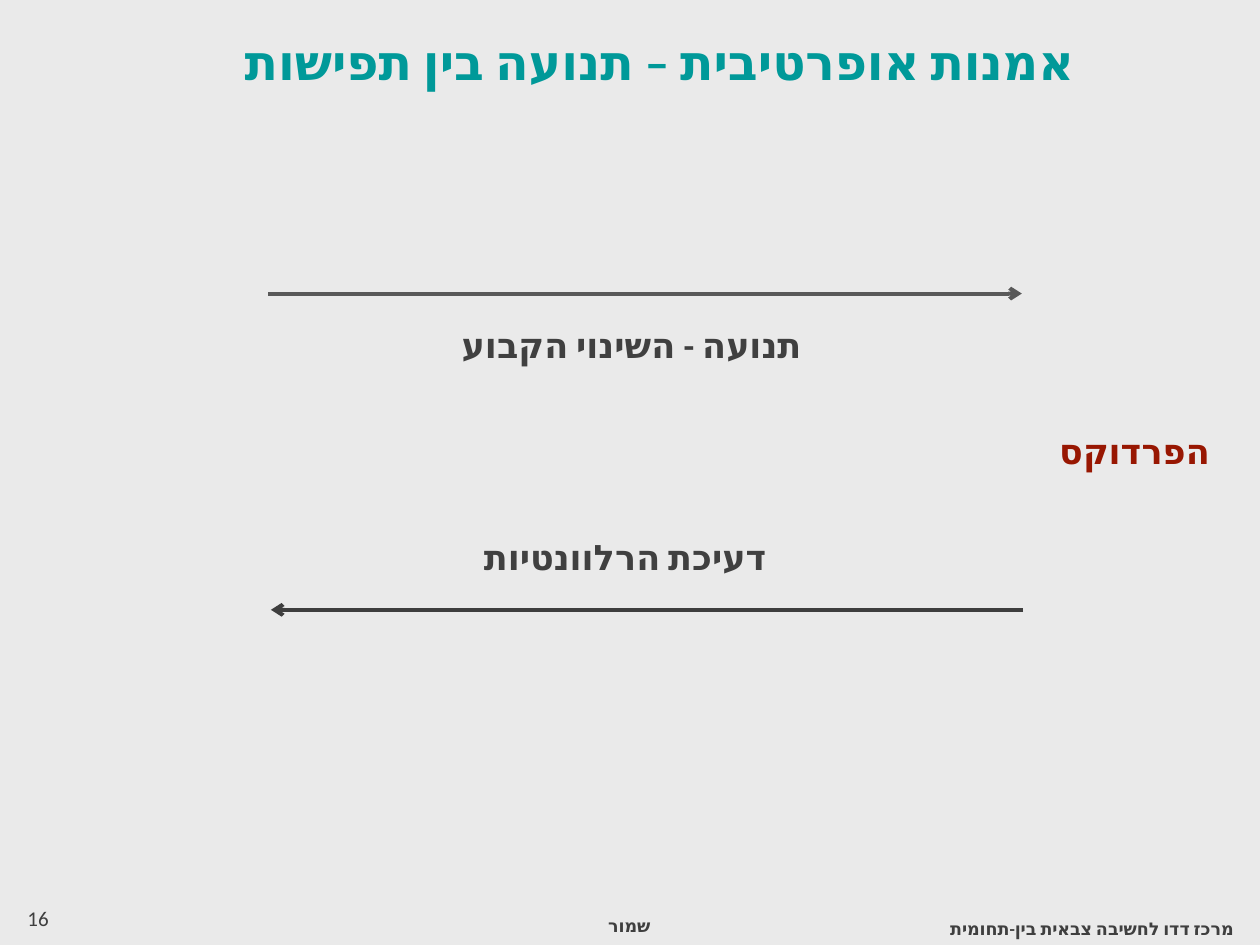
"""Build the slide on operational art as movement between conceptions."""
from dataclasses import dataclass

from lxml import etree
from pptx import Presentation
from pptx import util as u
from pptx.dml.color import RGBColor
from pptx.enum import lang, shapes, text
from pptx.oxml.ns import qn

FONT = "Calibri"
BACKGROUND = RGBColor(0xEA, 0xEA, 0xEA)
TEAL = RGBColor(0x00, 0x99, 0x99)
RED = RGBColor(0x98, 0x17, 0x02)
LABEL = RGBColor(0x40, 0x40, 0x40)
FOOTER = RGBColor(0x3F, 0x3F, 0x3F)
UPPER_ARROW = RGBColor(0x59, 0x59, 0x59)
LOWER_ARROW = RGBColor(0x3E, 0x3E, 0x3E)
LEFT, CENTER, RIGHT = text.PP_ALIGN.LEFT, text.PP_ALIGN.CENTER, text.PP_ALIGN.RIGHT


@dataclass(frozen=True)
class Box:
    left: float
    top: float
    width: float
    height: float


@dataclass(frozen=True)
class Label:
    words: str
    box: Box
    size: float = 20
    color: RGBColor = LABEL
    bold: bool = True
    align: text.PP_ALIGN = RIGHT
    grow: bool = False


@dataclass(frozen=True)
class Arrow:
    start: float
    end: float
    y: float
    color: RGBColor


LABELS = [
    Label("תנועה - השינוי הקבוע", Box(3.5, 2.52, 2.96, 0.44), grow=True),
    Label("דעיכת הרלוונטיות", Box(3.5, 4.2, 2.68, 0.44), grow=True),
    Label("הפרדוקס", Box(8.15, 3.36, 1.55, 0.44), color=RED, grow=True),
    Label("16", Box(0.12, 7.14, 2.33, 0.4), size=12, color=FOOTER, bold=False, align=LEFT),
    Label("שמור", Box(3.89, 7.21, 1.37, 0.4), size=10, color=FOOTER),
    Label("מרכז דדו לחשיבה צבאית בין-תחומית", Box(6.72, 7.24, 3.17, 0.4), size=10, color=FOOTER),
]
ARROWS = [
    Arrow(2.13, 8.11, 2.33, UPPER_ARROW),
    Arrow(8.12, 2.15, 4.84, LOWER_ARROW),
]


def write(tf, words: str, *, size: float, color: RGBColor, bold: bool, align: text.PP_ALIGN) -> None:
    """Write one right-to-left paragraph into a text frame."""
    tf.word_wrap = True
    tf.vertical_anchor = text.MSO_ANCHOR.TOP
    p = tf.paragraphs[0]
    p.alignment = align
    p._p.get_or_add_pPr().set("rtl", "1")
    r = p.add_run()
    r.text = words
    r.font.size = u.Pt(size)
    r.font.bold = bold
    r.font.color.rgb = color
    r.font.name = FONT
    r.font.language_id = lang.MSO_LANGUAGE_ID.HEBREW
    etree.SubElement(r._r.get_or_add_rPr(), qn("a:cs")).set("typeface", FONT)


def add_title(s, words: str, box: Box) -> None:
    """Move the title placeholder and fill it."""
    sp = s.shapes.title
    sp.left, sp.top = u.Inches(box.left), u.Inches(box.top)
    sp.width, sp.height = u.Inches(box.width), u.Inches(box.height)
    sp.text_frame.auto_size = text.MSO_AUTO_SIZE.NONE
    write(sp.text_frame, words, size=28, color=TEAL, bold=True, align=CENTER)


def add_label(s, label: Label) -> None:
    """Add a text box for a label."""
    box = label.box
    sp = s.shapes.add_textbox(
        u.Inches(box.left), u.Inches(box.top), u.Inches(box.width), u.Inches(box.height)
    )
    write(sp.text_frame, label.words, size=label.size, color=label.color,
          bold=label.bold, align=label.align)
    if label.grow:
        sp.text_frame.auto_size = text.MSO_AUTO_SIZE.SHAPE_TO_FIT_TEXT


def add_arrow(s, arrow: Arrow) -> None:
    """Add a horizontal line with an open arrowhead at its end."""
    sp = s.shapes.add_connector(
        shapes.MSO_CONNECTOR.STRAIGHT,
        u.Inches(arrow.start), u.Inches(arrow.y), u.Inches(arrow.end), u.Inches(arrow.y),
    )
    sp.line.color.rgb = arrow.color
    sp.line.width = u.Pt(2.25)
    etree.SubElement(sp.line._get_or_add_ln(), qn("a:tailEnd")).set("type", "arrow")
    etree.SubElement(sp._element.spPr, qn("a:effectLst"))


def main() -> None:
    """Build and save the presentation."""
    prs = Presentation()
    prs.slide_width, prs.slide_height = u.Inches(10), u.Inches(7.5)
    s = prs.slides.add_slide(prs.slide_layouts.get_by_name("Title Only"))
    s.background.fill.solid()
    s.background.fill.fore_color.rgb = BACKGROUND
    add_title(s, "אמנות אופרטיבית – תנועה בין תפישות", Box(0.86, 0.2, 8.75, 1.72))
    for arrow in ARROWS:
        add_arrow(s, arrow)
    for label in LABELS:
        add_label(s, label)
    prs.save("out.pptx")


if __name__ == "__main__":
    main()
